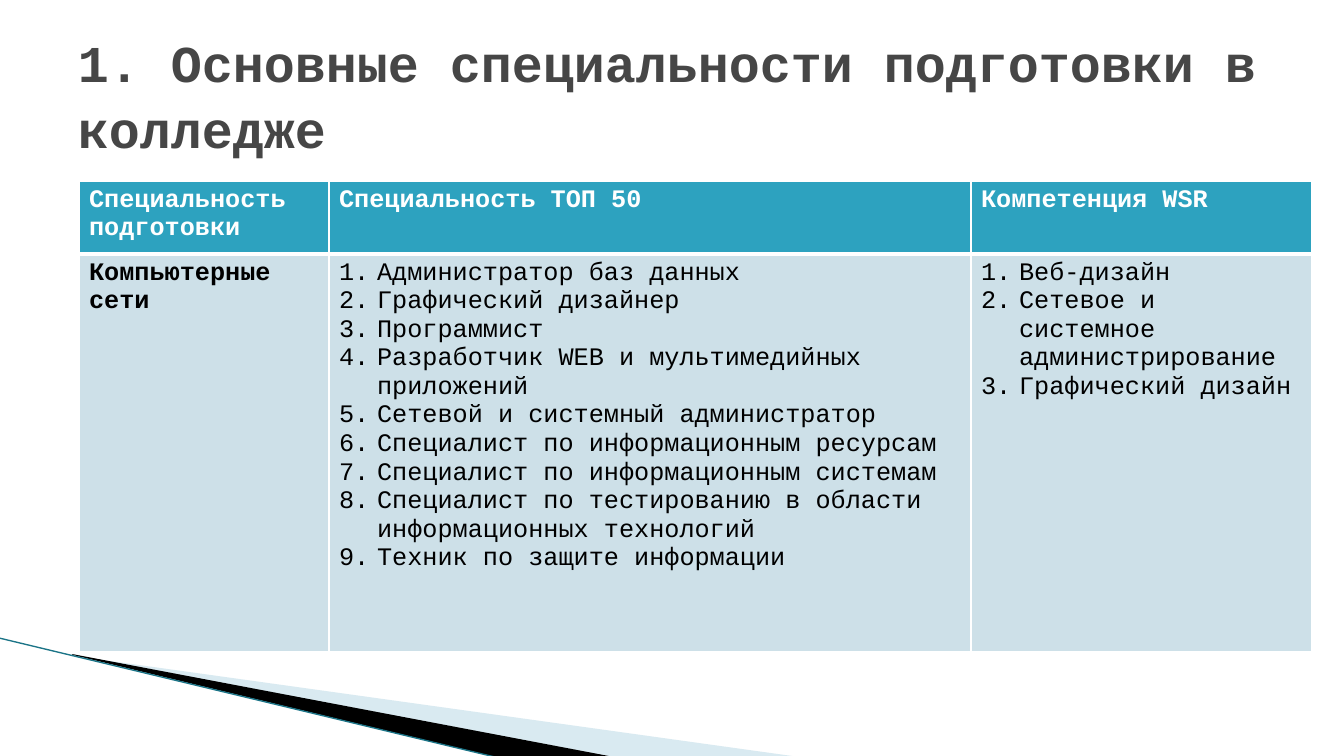
from lxml.etree import SubElement
from pptx import Presentation
from pptx.dml.color import RGBColor
from pptx.enum.text import MSO_ANCHOR
from pptx.oxml.ns import qn
from pptx.util import Pt

PX = 9144000 / 1008  # EMU per px, at 100.8 px to the inch
WHITE, BLACK, TEAL, PALE_BLUE = "FFFFFF", "000000", "2DA2BF", "CDE0E8"
NUMBER_INDENT = 38


def px(length):
    return round(length * PX)


def add_run(paragraph, text, size, color, bold):
    run = paragraph.add_run()
    run.text = text
    run.font.name = "Courier New"
    run.font.size = Pt(size)
    run.font.bold = bold
    run.font.color.rgb = RGBColor.from_string(color)


presentation = Presentation()
presentation.slide_width, presentation.slide_height = px(1344), px(756)
slide = presentation.slides.add_slide(presentation.slide_layouts[6])

# Wedges and line in the lower left corner
wedges = [
    ([(74, 656), (799, 757), (613, 757), (74, 655)], "A0CBDC", 40),
    ([(72, 654), (614, 757), (500, 758), (73, 655)], BLACK, 100),
]
for points, color, opacity in wedges:
    builder = slide.shapes.build_freeform(*points[0], scale=PX)
    builder.add_line_segments(points[1:], close=True)
    wedge = builder.convert_to_shape()
    wedge.shadow.inherit = False
    wedge.line.fill.background()
    wedge.fill.solid()
    wedge.fill.fore_color.rgb = RGBColor.from_string(color)
    if opacity < 100:
        wedge_color = wedge.fill._xPr.find(".//" + qn("a:srgbClr"))
        SubElement(wedge_color, qn("a:alpha"), val=str(opacity * 1000))

edge = slide.shapes.add_connector(1, px(-1), px(638), px(499), px(758))
edge.line.width = Pt(0.95)
edge.line.color.rgb = RGBColor.from_string("1B7487")
SubElement(edge._element.spPr, qn("a:effectLst"))

# Title
title = slide.shapes.add_textbox(px(68), px(30), px(1210), px(126))
title.text_frame.word_wrap = True
title.text_frame.vertical_anchor = MSO_ANCHOR.MIDDLE
heading = title.text_frame.paragraphs[0]
heading.line_spacing = 1.06
add_run(heading, "1. Основные специальности подготовки в колледже", 36.9, "464646", True)

# Table: each cell is a list of paragraphs
headers = ["Специальность подготовки", "Специальность ТОП 50", "Компетенция WSR"]
top_specialties = [
    "Администратор баз данных",
    "Графический дизайнер",
    "Программист",
    "Разработчик WEB и мультимедийных приложений",
    "Сетевой и системный администратор",
    "Специалист по информационным ресурсам",
    "Специалист по информационным системам",
    "Специалист по тестированию в области информационных технологий",
    "Техник по защите информации",
]
competencies = [
    "Веб-дизайн",
    "Сетевое и системное администрирование",
    "Графический дизайн",
]
rows = [
    [[header] for header in headers],
    [["Компьютерные сети"], top_specialties, competencies],
]
column_widths, row_heights = [250, 642, 341], [73, 398]

table = slide.shapes.add_table(
    2, 3, px(79), px(181), px(sum(column_widths)), px(sum(row_heights))
).table
for column, width in zip(table.columns, column_widths):
    column.width = px(width)
for row, height in zip(table.rows, row_heights):
    row.height = px(height)

for row_index, row in enumerate(rows):
    is_header = row_index == 0
    for column_index, lines in enumerate(row):
        cell = table.cell(row_index, column_index)
        is_numbered = len(lines) > 1
        for line_index, line in enumerate(lines):
            frame = cell.text_frame
            paragraph = frame.add_paragraph() if line_index else frame.paragraphs[0]
            if is_numbered:
                properties = paragraph._p.get_or_add_pPr()
                properties.set("marL", str(px(NUMBER_INDENT)))
                properties.set("indent", str(px(-NUMBER_INDENT)))
                SubElement(properties, qn("a:buFont"), typeface="+mj-lt")
                SubElement(properties, qn("a:buAutoNum"), type="arabicPeriod")
            add_run(paragraph, line, 18, WHITE if is_header else BLACK, not is_numbered)

        cell_properties = cell._tc.get_or_add_tcPr()
        for side in ("lnL", "lnR", "lnT", "lnB"):
            meets_header = side == ("lnB" if is_header else "lnT")
            border_width = Pt(3 if meets_header else 1)
            border = SubElement(cell_properties, qn("a:" + side), w=str(border_width))
            border_fill = SubElement(border, qn("a:solidFill"))
            SubElement(border_fill, qn("a:srgbClr"), val=WHITE)
        cell.fill.solid()
        cell.fill.fore_color.rgb = RGBColor.from_string(TEAL if is_header else PALE_BLUE)

presentation.save("out.pptx")
